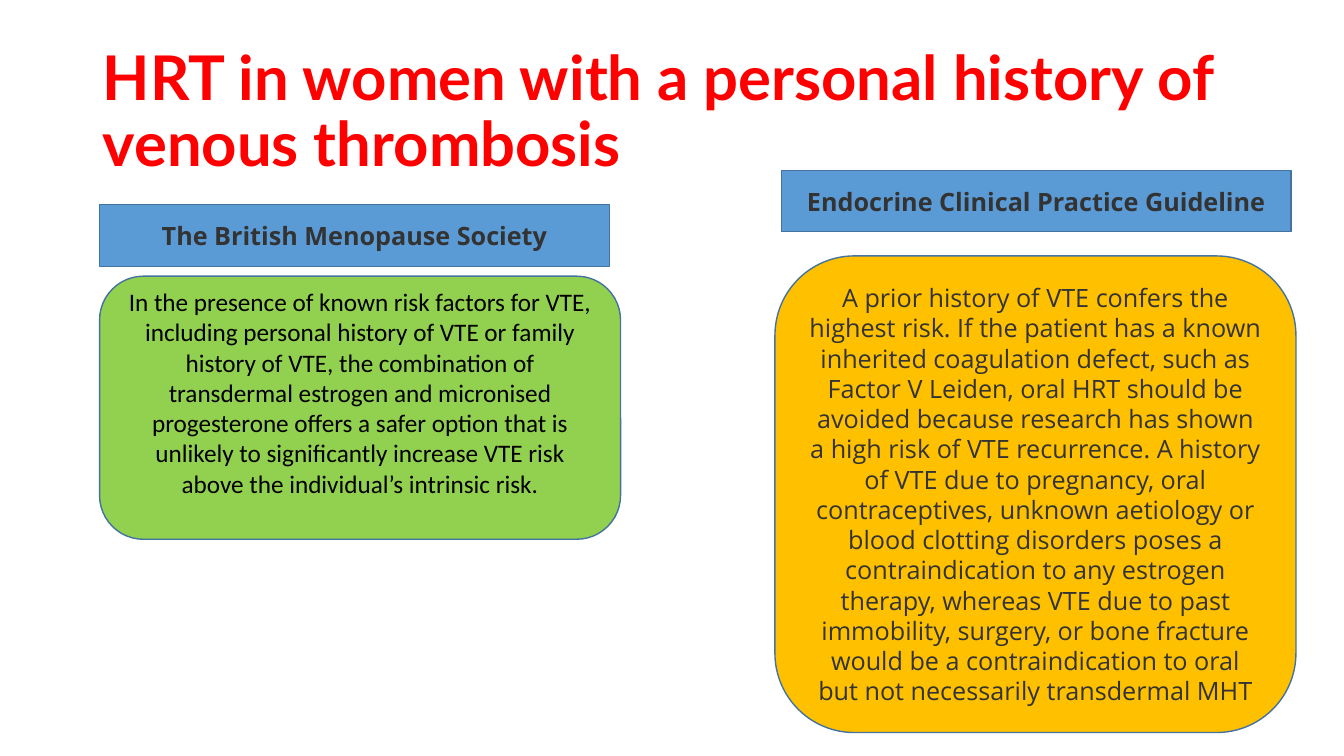
from pptx import Presentation
from pptx.dml.color import RGBColor
from pptx.enum.shapes import MSO_SHAPE
from pptx.enum.text import MSO_ANCHOR, PP_ALIGN
from pptx.util import Cm, Pt

RED = RGBColor(0xFF, 0x00, 0x00)
BLACK = RGBColor(0x00, 0x00, 0x00)
CHARCOAL = RGBColor(0x33, 0x33, 0x33)
GREEN = RGBColor(0x92, 0xD0, 0x50)
AMBER = RGBColor(0xFF, 0xC0, 0x00)
BLUE = RGBColor(0x5B, 0x9B, 0xD5)
OUTLINE = RGBColor(0x43, 0x73, 0x9E)

BMS_ADVICE = (
    "In the presence of known risk factors for VTE, including personal history of VTE "
    "or family history of VTE, the combination of transdermal estrogen and micronised "
    "progesterone offers a safer option that is unlikely to significantly increase VTE "
    "risk above the individual’s intrinsic risk."
)
ENDOCRINE_ADVICE = (
    "A prior history of VTE confers the highest risk. If the patient has a known "
    "inherited coagulation defect, such as Factor V Leiden, oral HRT should be avoided "
    "because research has shown a high risk of VTE recurrence. A history of VTE due to "
    "pregnancy, oral contraceptives, unknown aetiology or blood clotting disorders poses "
    "a contraindication to any estrogen therapy, whereas VTE due to past immobility, "
    "surgery, or bone fracture would be a contraindication to oral but not necessarily "
    "transdermal MHT"
)


class GuidelinePage:
    """Holds the current slide and the style its elements share."""

    body_size = Pt(18)
    heading_size = (12.85, 1.55)
    panel_width = 13.13

    def __init__(self, deck):
        self.page = deck.slides.add_slide(deck.slide_layouts[6])

    def add_text(self, box, text, font, size, color, bold=False, align=PP_ALIGN.CENTER):
        frame = box.text_frame
        frame.word_wrap = True
        frame.vertical_anchor = MSO_ANCHOR.MIDDLE
        para = frame.paragraphs[0]
        para.alignment = align
        span = para.add_run()
        span.text = text
        span.font.name = font
        span.font.size = size
        span.font.bold = bold
        span.font.color.rgb = color
        return para

    def title(self, text, left, top, width, height):
        box = self.page.shapes.add_textbox(Cm(left), Cm(top), Cm(width), Cm(height))
        para = self.add_text(box, text, "Lato", Pt(44), RED, True, PP_ALIGN.LEFT)
        para.line_spacing = 0.9

    def block(self, kind, left, top, width, height, fill):
        box = self.page.shapes.add_shape(kind, Cm(left), Cm(top), Cm(width), Cm(height))
        box.shadow.inherit = False
        box.fill.solid()
        box.fill.fore_color.rgb = fill
        box.line.color.rgb = OUTLINE
        box.line.width = Pt(1)
        return box

    def heading(self, text, left, top):
        box = self.block(MSO_SHAPE.RECTANGLE, left, top, *self.heading_size, BLUE)
        self.add_text(box, text, "Open Sans", self.body_size, CHARCOAL, bold=True)

    def panel(self, text, left, top, height, fill, font, color, bottom_inset=0.13):
        box = self.block(MSO_SHAPE.ROUNDED_RECTANGLE, left, top, self.panel_width, height, fill)
        box.text_frame.margin_bottom = Cm(bottom_inset)
        self.add_text(box, text, font, self.body_size, color)


def main():
    deck = Presentation()
    deck.slide_width, deck.slide_height = Cm(33.87), Cm(19.05)
    page = GuidelinePage(deck)

    page.title("HRT in women with a personal history of venous thrombosis",
               2.34, 1.02, 29.21, 3.68)

    # Advice panels
    page.panel(BMS_ADVICE, 2.51, 6.96, 6.63, GREEN, "Calibri", BLACK, bottom_inset=0.9)
    page.panel(ENDOCRINE_ADVICE, 19.53, 6.45, 12.01, AMBER, "Open Sans", CHARCOAL)

    # Names of the guidelines
    page.heading("The British Menopause Society", 2.51, 5.16)
    page.heading("Endocrine Clinical Practice Guideline", 19.69, 4.29)

    deck.save("out.pptx")


if __name__ == "__main__":
    main()
